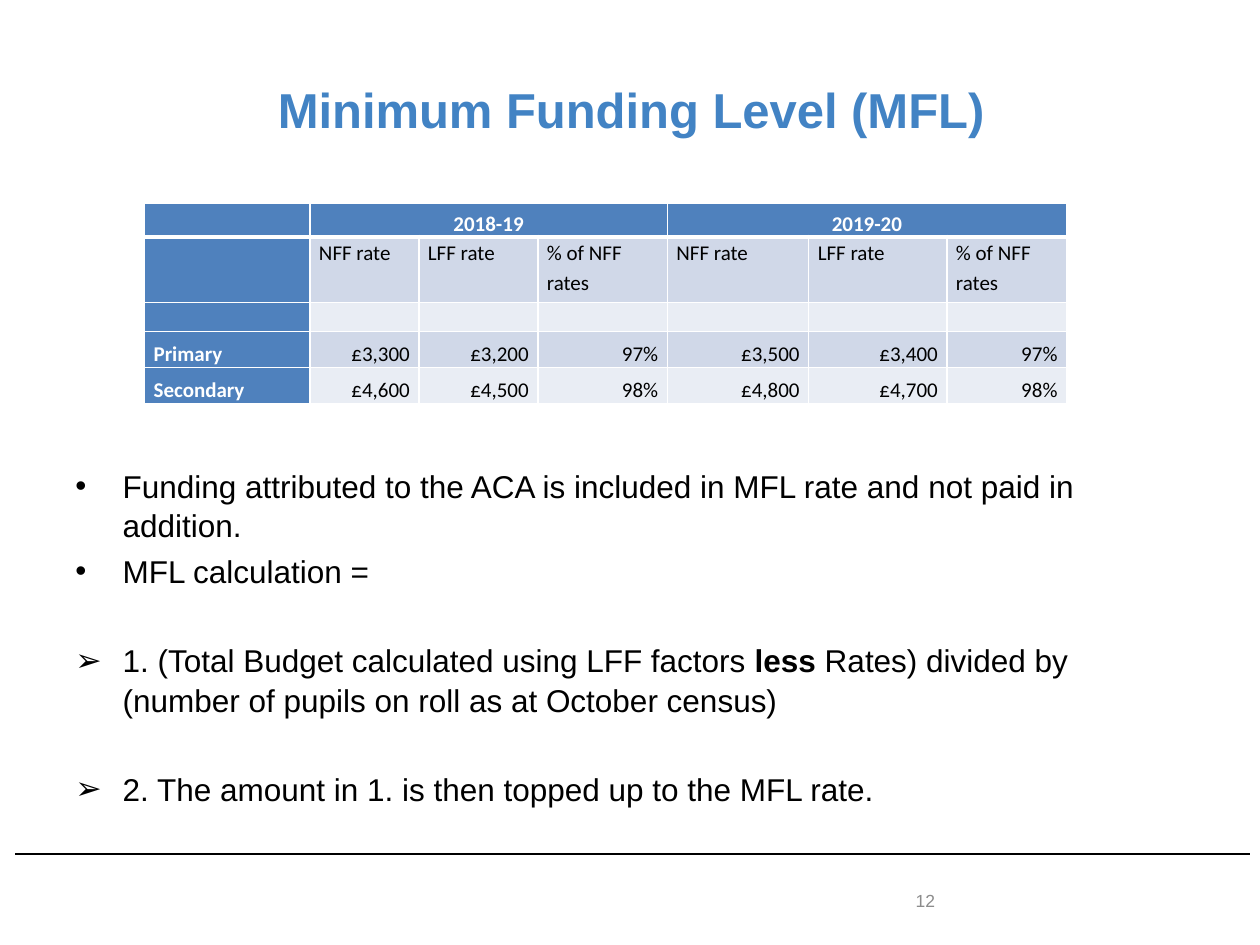
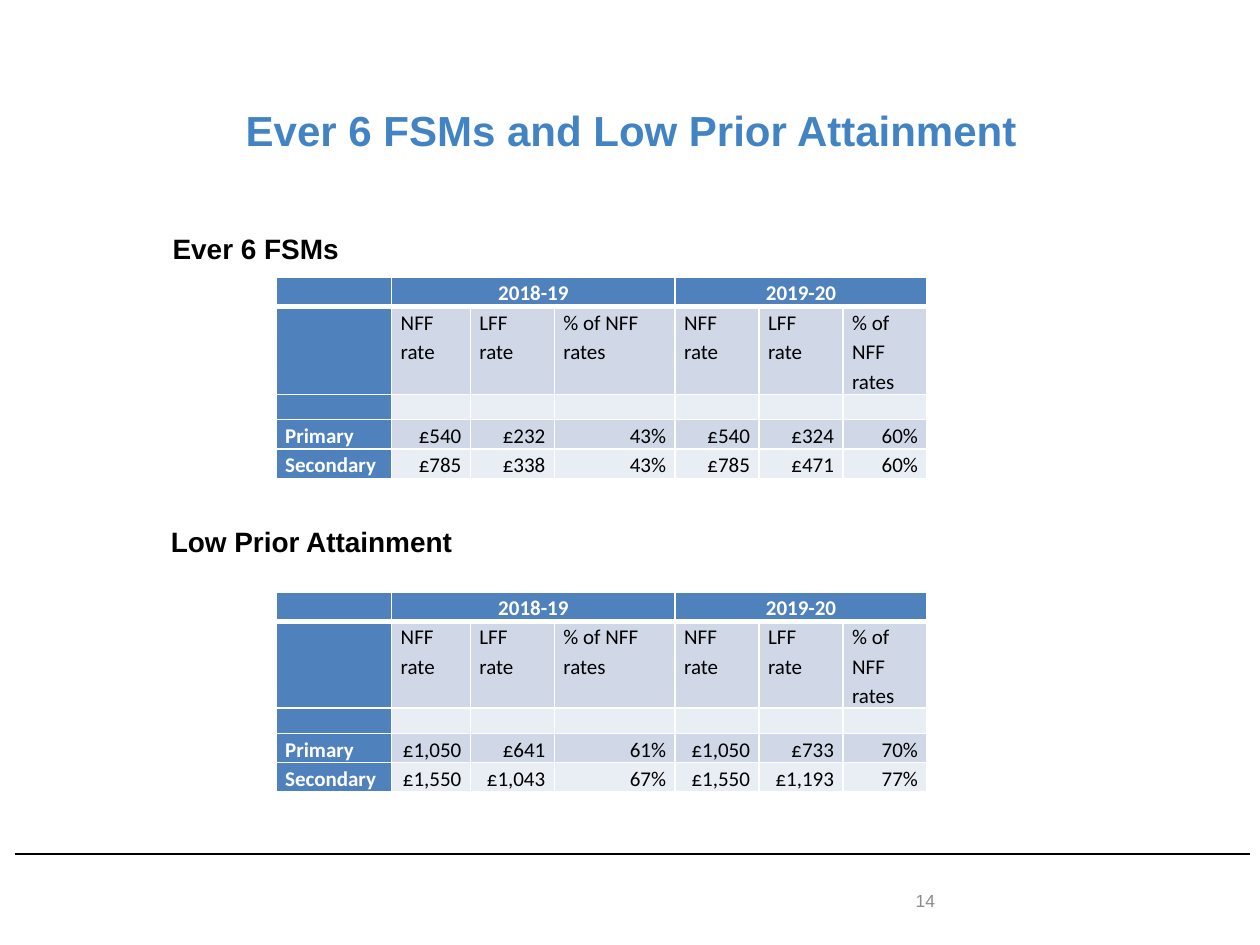
from lxml import etree
from pptx import Presentation
from pptx.dml.color import RGBColor
from pptx.enum import shapes, text
from pptx.oxml import ns
from pptx.util import Pt

rgb = RGBColor.from_string
TITLE, HEAD, BAND, PALE = "4283C4", "4F81BD", "D0D8E8", "E9EDF4"
BLACK, WHITE, GREY = "000000", "FFFFFF", "8C8C8C"
ALIGN, ANCHOR = text.PP_ALIGN, text.MSO_ANCHOR

HEADING = dict(size=Pt(16), bold=True)
CELL = dict(name="Calibri", size=Pt(12))
RATES = ["NFF rate", "LFF rate", "% of NFF rates"]
SMALL_COLS = [66, 45, 48, 69, 48, 48, 48]


def add_run(p, words, color=BLACK, **fmt):
    r = p.add_run()
    r.text = words
    for key, value in (dict(name="Arial", bold=False) | fmt).items():
        setattr(r.font, key, value)
    r.font.color.rgb = rgb(color)


def add_box(s, box, **fmt):
    """Add a wrapping text box and return its text frame."""
    tf = s.shapes.add_textbox(*map(Pt, box)).text_frame
    for key, value in (dict(word_wrap=True) | fmt).items():
        setattr(tf, key, value)
    return tf


slides = [
    dict(
        title="Minimum Funding Level (MFL)", title_size=28, title_inset=2.4, number="12",
        headings=[],
        tables=[
            dict(left=82.6, top=116, cols=[94.5, 62.3, 68, 74, 80.8, 79, 68.4],
                 rows=[19.4, 37.4, 16.6, 20.6, 20.6],
                 data=[["Primary", "£3,300", "£3,200", "97%", "£3,500", "£3,400", "97%"],
                       ["Secondary", "£4,600", "£4,500", "98%", "£4,800", "£4,700", "98%"]]),
        ],
        bullets=[
            ("•", 0, ["Funding attributed to the ACA is included in MFL rate and not paid in addition."]),
            ("•", 3.6, ["MFL calculation ="]),
            ("➢", 28.7, ["1. (Total Budget calculated using LFF factors ", "less",
                         " Rates) divided by (number of pupils on roll as at October census)"]),
            ("➢", 28.7, ["2. The amount in 1. is then topped up to the MFL rate."]),
        ],
    ),
    dict(
        title="Ever 6 FSMs and Low Prior Attainment", title_size=24, title_inset=16.7, number="14",
        headings=[("Ever 6 FSMs", 91.6, 129), ("Low Prior Attainment", 90.6, 296.4)],
        tables=[
            dict(left=157.8, top=158.4, cols=SMALL_COLS, rows=[16.8, 50.2, 14.4, 16.8, 16.8],
                 data=[["Primary", "£540", "£232", "43%", "£540", "£324", "60%"],
                       ["Secondary", "£785", "£338", "43%", "£785", "£471", "60%"]]),
            dict(left=157.8, top=338.2, cols=SMALL_COLS, rows=[16.8, 49, 14.4, 16.8, 16.8],
                 data=[["Primary", "£1,050", "£641", "61%", "£1,050", "£733", "70%"],
                       ["Secondary", "£1,550", "£1,043", "67%", "£1,550", "£1,193", "77%"]]),
        ],
        bullets=[],
    ),
]

prs = Presentation()
prs.slide_width, prs.slide_height = Pt(720), Pt(540)

for page in slides:
    s = prs.slides.add_slide(prs.slide_layouts[6])

    # Footer rule, title and page number
    rule = s.shapes.add_connector(shapes.MSO_CONNECTOR.STRAIGHT, Pt(8.6), Pt(488.2), Pt(714.2), Pt(488.2))
    rule.line.color.rgb = rgb(BLACK)
    rule.line.width = Pt(1)
    etree.SubElement(rule._element.spPr, ns.qn("a:effectLst"))

    tf = add_box(s, (36.7, 43.2, 648, 72.7), margin_top=Pt(page["title_inset"]))
    p = tf.paragraphs[0]
    p.alignment = ALIGN.CENTER
    add_run(p, page["title"], TITLE, size=Pt(page["title_size"]), bold=True)

    tf = add_box(s, (516.2, 500.4, 167.8, 28.8), vertical_anchor=ANCHOR.MIDDLE)
    add_run(tf.paragraphs[0], page["number"], GREY, size=Pt(10))

    for words, left, top in page["headings"]:
        tf = add_box(s, (left, top, 260, 26))
        add_run(tf.paragraphs[0], words, **HEADING)

    # Rate tables: year row, rate names, spacer, then one row per phase
    for t in page["tables"]:
        cols, rows = t["cols"], t["rows"]
        tb = s.shapes.add_table(len(rows), len(cols), Pt(t["left"]), Pt(t["top"]),
                                Pt(sum(cols)), Pt(sum(rows))).table
        for col, width in zip(tb.columns, cols):
            col.width = Pt(width)
        for row, height in zip(tb.rows, rows):
            row.height = Pt(height)
        for first in (1, 4):
            tb.cell(0, first).merge(tb.cell(0, first + 2))

        grid = [["", "2018-19", "", "", "2019-20", "", ""], [""] + RATES * 2, [""] * 7, *t["data"]]
        for i, line in enumerate(grid):
            for j, words in enumerate(line):
                c = tb.cell(i, j)
                is_head = i == 0 or j == 0
                tcPr = c._tc.get_or_add_tcPr()
                for side in ("L", "R", "T", "B"):
                    thick = (i, side) in ((0, "B"), (1, "T"))
                    ln = etree.SubElement(tcPr, ns.qn(f"a:ln{side}"), w=str(Pt(3 if thick else 1)))
                    fill = etree.SubElement(ln, ns.qn("a:solidFill"))
                    etree.SubElement(fill, ns.qn("a:srgbClr"), val=WHITE)
                c.fill.solid()
                c.fill.fore_color.rgb = rgb(HEAD if is_head else BAND if i % 2 else PALE)
                c.margin_left = c.margin_right = Pt(5.2)
                c.margin_top = c.margin_bottom = 0
                c.vertical_anchor = ANCHOR.TOP if i == 1 else ANCHOR.BOTTOM
                p = c.text_frame.paragraphs[0]
                if not words:
                    p._p.get_or_add_endParaRPr().set("sz", "1000")
                    continue
                p.line_spacing = 1.15
                p.alignment = ALIGN.CENTER if i == 0 else ALIGN.RIGHT if i > 2 and j else ALIGN.LEFT
                add_run(p, words, WHITE if is_head else BLACK, bold=is_head, **CELL)

    # Bulleted explanation below the table
    if page["bullets"]:
        tf = add_box(s, (36, 262.4, 653, 220))
    for k, (mark, gap, parts) in enumerate(page["bullets"]):
        p = tf.add_paragraph() if k else tf.paragraphs[0]
        p.space_before, p.line_spacing = Pt(gap), 1.04
        pPr = p._p.get_or_add_pPr()
        pPr.set("marL", str(Pt(27)))
        pPr.set("indent", str(-Pt(27)))
        etree.SubElement(pPr, ns.qn("a:buFont"), typeface="Arial")
        etree.SubElement(pPr, ns.qn("a:buChar"), char=mark)
        for words in parts:
            add_run(p, words, size=Pt(18), bold=words == "less")

prs.save("out.pptx")
